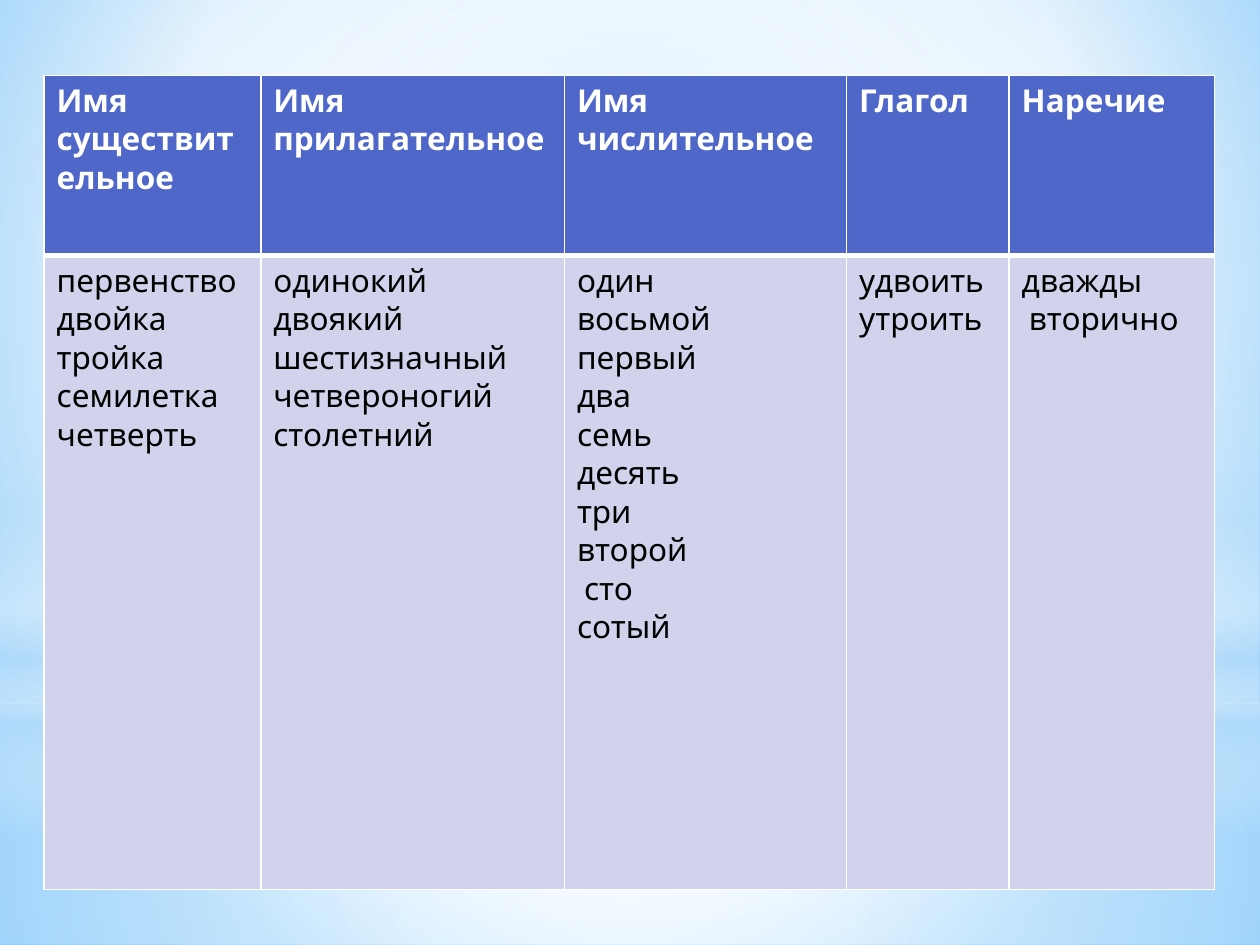
from lxml.etree import SubElement as Sub
from pptx import Presentation
from pptx.dml.color import RGBColor as RGB
from pptx.enum.shapes import MSO_SHAPE as Form
from pptx.oxml import parse_xml
from pptx.oxml.ns import nsdecls, qn
from pptx.util import Inches, Pt

WHITE = RGB(0xFF, 0xFF, 0xFF)
BLACK = RGB(0x00, 0x00, 0x00)
BLUE = RGB(0x4E, 0x67, 0xC8)
LILAC = RGB(0xD0, 0xD3, 0xEB)
SKY = RGB(0x9E, 0xD5, 0xFF)
DEEP = RGB(0x5B, 0xB9, 0xFF)
PALE = RGB(0xB4, 0xDC, 0xFA)

CENTER = (50, 50, 50, 50)
WIDTHS = (1.72, 2.41, 2.24, 1.29, 1.63)
HEIGHTS = (1.43, 5.03)

# Each column: heading and its words
COLUMNS = [
    ("Имя существительное",
     ["первенство", "двойка", "тройка", "семилетка", "четверть"]),
    ("Имя прилагательное",
     ["одинокий", "двоякий", "шестизначный четвероногий", "столетний"]),
    ("Имя числительное",
     ["один", "восьмой", "первый", "два", "семь", "десять", "три",
      "второй", " сто", "сотый"]),
    ("Глагол", ["удвоить", "утроить"]),
    ("Наречие", ["дважды", " вторично"]),
]


class Deck:
    font = "Cabin"
    size = Pt(18)

    def __init__(self):
        self.prs = Presentation()
        self.prs.slide_width = Inches(10)
        self.prs.slide_height = Inches(7.5)
        self.slide = self.prs.slides.add_slide(self.prs.slide_layouts[6])

    def blend(self, owner, stops, focus=None):
        """Swap the solid fill for a gradient, round if it has a focus."""
        grad = parse_xml(f'<a:gradFill {nsdecls("a")} rotWithShape="1"/>')
        group = Sub(grad, qn("a:gsLst"))
        for pos, color, alpha in stops:
            stop = Sub(group, qn("a:gs"), pos=str(pos * 1000))
            tint = Sub(stop, qn("a:srgbClr"), val=str(color))
            if alpha < 100:
                Sub(tint, qn("a:alpha"), val=str(alpha * 1000))
        if focus:
            round_ = Sub(grad, qn("a:path"), path="circle")
            sides = {k: str(v * 1000) for k, v in zip("ltrb", focus)}
            Sub(round_, qn("a:fillToRect"), **sides)
        else:
            Sub(grad, qn("a:lin"), ang="5400000", scaled="0")
        owner.replace(owner.find(qn("a:solidFill")), grad)

    def backdrop(self, stops, focus):
        back = self.slide.background
        back.fill.solid()
        back.fill.fore_color.rgb = WHITE
        self.blend(self.slide._element.cSld.bg.bgPr, stops, focus)

    def glow(self, form, top, height, stops, focus=CENTER):
        shape = self.slide.shapes.add_shape(
            form, 0, Inches(top), Inches(10), Inches(height))
        shape.shadow.inherit = False
        shape.line.fill.background()
        shape.fill.solid()
        self.blend(shape._element.spPr, stops, focus)

    def edge(self, cell, widths):
        props = cell._tc.get_or_add_tcPr()
        for i, (side, width) in enumerate(zip("LRTB", widths)):
            line = parse_xml(f'<a:ln{side} {nsdecls("a")} w="{Pt(width)}"/>')
            fill = Sub(line, qn("a:solidFill"))
            Sub(fill, qn("a:srgbClr"), val=str(WHITE))
            props.insert(i, line)

    def cell(self, cell, lines, fill, color, bold, widths):
        cell.fill.solid()
        cell.fill.fore_color.rgb = fill
        self.edge(cell, widths)
        frame = cell.text_frame
        for i, text in enumerate(lines):
            para = frame.add_paragraph() if i else frame.paragraphs[0]
            run = para.add_run()
            run.text = text
            run.font.name = self.font
            run.font.size = self.size
            run.font.bold = bold
            run.font.color.rgb = color

    def table(self, left, top, columns):
        table = self.slide.shapes.add_table(
            len(HEIGHTS), len(columns), Inches(left), Inches(top),
            Inches(sum(WIDTHS)), Inches(sum(HEIGHTS))).table
        for row, height in zip(table.rows, HEIGHTS):
            row.height = Inches(height)
        for i, (head, words) in enumerate(columns):
            table.columns[i].width = Inches(WIDTHS[i])
            self.cell(table.cell(0, i), [head], BLUE, WHITE, True,
                      (1, 1, 1, 3))
            self.cell(table.cell(1, i), words, LILAC, BLACK, False,
                      (1, 1, 3, 1))


def main():
    deck = Deck()

    # Sky background
    deck.backdrop([(0, SKY, 100), (60, WHITE, 100), (100, DEEP, 100)],
                  (20, 10, 20, 60))

    # Soft light: ground, sky, horizon, halo
    deck.glow(Form.RECTANGLE, 5.58, 1.92,
              [(0, WHITE, 91), (37, WHITE, 76), (100, PALE, 79)])
    deck.glow(Form.RECTANGLE, 0, 5.58,
              [(0, WHITE, 89), (48, WHITE, 62), (100, PALE, 79)])
    deck.glow(Form.RECTANGLE, 4.12, 2.5,
              [(0, WHITE, 0), (29, WHITE, 30), (45, PALE, 40),
               (55, WHITE, 26), (65, PALE, 60), (100, WHITE, 0)], None)
    deck.glow(Form.OVAL, 1.75, 5.58, [(0, WHITE, 100), (56, WHITE, 0)])

    # Parts of speech
    deck.table(0.35, 0.6, COLUMNS)

    deck.prs.save("out.pptx")


if __name__ == "__main__":
    main()
